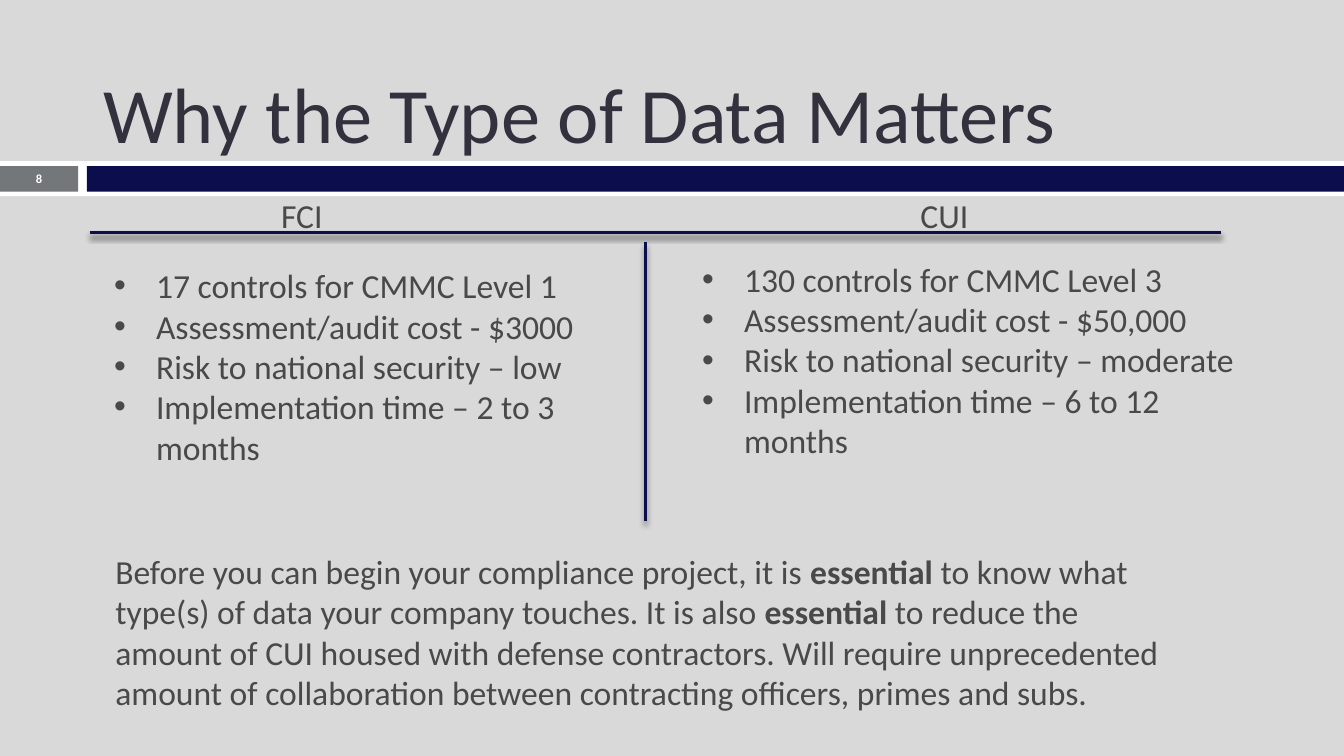
from dataclasses import dataclass

from pptx import Presentation
from pptx.dml.color import RGBColor
from pptx.enum.shapes import MSO_CONNECTOR as Connector, MSO_SHAPE as Shape
from pptx.enum.text import MSO_ANCHOR as Anchor, PP_ALIGN as Align
from pptx.oxml import parse_xml
from pptx.oxml.ns import nsdecls
from pptx.util import Pt


@dataclass(frozen=True)
class Theme:
    font: str = "Calibri"
    background: str = "D9D9D9"
    white: str = "FFFFFF"
    grey: str = "73777A"
    navy: str = "0B0D4D"
    heading: str = "33313D"
    body: str = "494949"
    title_size: float = 42
    body_size: float = 18
    number_size: float = 6.7


THEME = Theme()
INDENT = 22.5

COLUMNS = [
    ("FCI", (113.8, 100.8, 95.8, 28.8), Align.CENTER, (54, 138.5, 270, 116.6), [
        "17 controls for CMMC Level 1",
        "Assessment/audit cost - $3000",
        "Risk to national security – low",
        "Implementation time – 2 to 3 months",
    ]),
    ("CUI", (486, 100.8, 84.2, 28.8), Align.LEFT, (369, 135, 303.1, 116.6), [
        "130 controls for CMMC Level 3",
        "Assessment/audit cost - $50,000",
        "Risk to national security – moderate",
        "Implementation time – 6 to 12 months",
    ]),
]

SUMMARY = [
    ("Before you can begin your compliance project, it is ", False),
    ("essential", True),
    (" to know what type(s) of data your company touches. It is also ", False),
    ("essential", True),
    (" to reduce the amount of CUI housed with defense contractors. Will require "
     "unprecedented amount of collaboration between contracting officers, primes "
     "and subs.", False),
]

BANDS = [
    ((0, 86.4, 720, 18.7), THEME.white),
    ((0, 89.1, 41.9, 13.6), THEME.grey),
    ((46.6, 89.1, 673.4, 13.6), THEME.navy),
]

DIVIDERS = [(48.2, 124.5, 654, 124.5), (345.8, 129.6, 345.8, 279.4)]


def rgb(value):
    return RGBColor.from_string(value)


def set_all(target, formats):
    for name, value in formats.items():
        setattr(target, name, value)


def add_band(slide, box, color):
    band = slide.shapes.add_shape(Shape.RECTANGLE, *map(Pt, box))
    band.shadow.inherit = False
    band.fill.solid()
    band.fill.fore_color.rgb = rgb(color)
    band.line.fill.background()


def add_divider(slide, ends):
    divider = slide.shapes.add_connector(Connector.STRAIGHT, *map(Pt, ends))
    divider.line.color.rgb = rgb(THEME.navy)
    divider.line.width = Pt(1.5)
    divider._element.spPr.append(parse_xml(
        f'<a:effectLst {nsdecls("a")}>'
        f'<a:outerShdw blurRad="{Pt(3)}" dist="{Pt(2.4)}" dir="5400000" rotWithShape="0">'
        '<a:srgbClr val="000000"><a:alpha val="45000"/></a:srgbClr>'
        '</a:outerShdw></a:effectLst>'))


def add_bullet(paragraph):
    properties = paragraph._p.get_or_add_pPr()
    properties.set("marL", str(Pt(INDENT)))
    properties.set("indent", str(-Pt(INDENT)))
    for xml in ('<a:buFont {} typeface="Arial"/>', '<a:buChar {} char="•"/>'):
        properties.append(parse_xml(xml.format(nsdecls("a"))))


def add_text(slide, box, paragraphs, size=THEME.body_size, color=THEME.body,
             align=Align.LEFT, anchor=Anchor.TOP, bulleted=False):
    frame = slide.shapes.add_textbox(*map(Pt, box)).text_frame
    set_all(frame, {"word_wrap": True, "vertical_anchor": anchor})
    for index, pieces in enumerate(paragraphs):
        paragraph = frame.add_paragraph() if index else frame.paragraphs[0]
        paragraph.alignment = align
        if bulleted:
            add_bullet(paragraph)
        for wording, bold in pieces:
            run = paragraph.add_run()
            run.text = wording
            set_all(run.font, {"name": THEME.font, "size": Pt(size), "bold": bold})
            run.font.color.rgb = rgb(color)
    return frame


def add_column(slide, heading, heading_box, align, list_box, points):
    add_text(slide, heading_box, [[(heading, False)]], align=align)
    add_text(slide, list_box, [[(point, False)] for point in points], bulleted=True)


def main():
    deck = Presentation()
    set_all(deck, {"slide_width": Pt(720), "slide_height": Pt(405)})
    slide = deck.slides.add_slide(deck.slide_layouts[6])
    slide.background.fill.solid()
    slide.background.fill.fore_color.rgb = rgb(THEME.background)

    for box, color in BANDS:
        add_band(slide, box, color)
    add_text(slide, (48.2, 9.4, 642.2, 79.2), [[("Why the Type of Data Matters", False)]],
             size=THEME.title_size, color=THEME.heading, anchor=Anchor.BOTTOM)
    for ends in DIVIDERS:
        add_divider(slide, ends)
    for column in COLUMNS:
        add_column(slide, *column)
    add_text(slide, (54.7, 291.6, 581.8, 94.3), [SUMMARY])
    page_number = add_text(slide, (0, 88.6, 41.9, 14.4), [[("8", True)]],
                           size=THEME.number_size, color=THEME.white,
                           align=Align.CENTER, anchor=Anchor.MIDDLE)
    set_all(page_number, {"margin_top": 0, "margin_bottom": 0})

    deck.save("out.pptx")


main()
